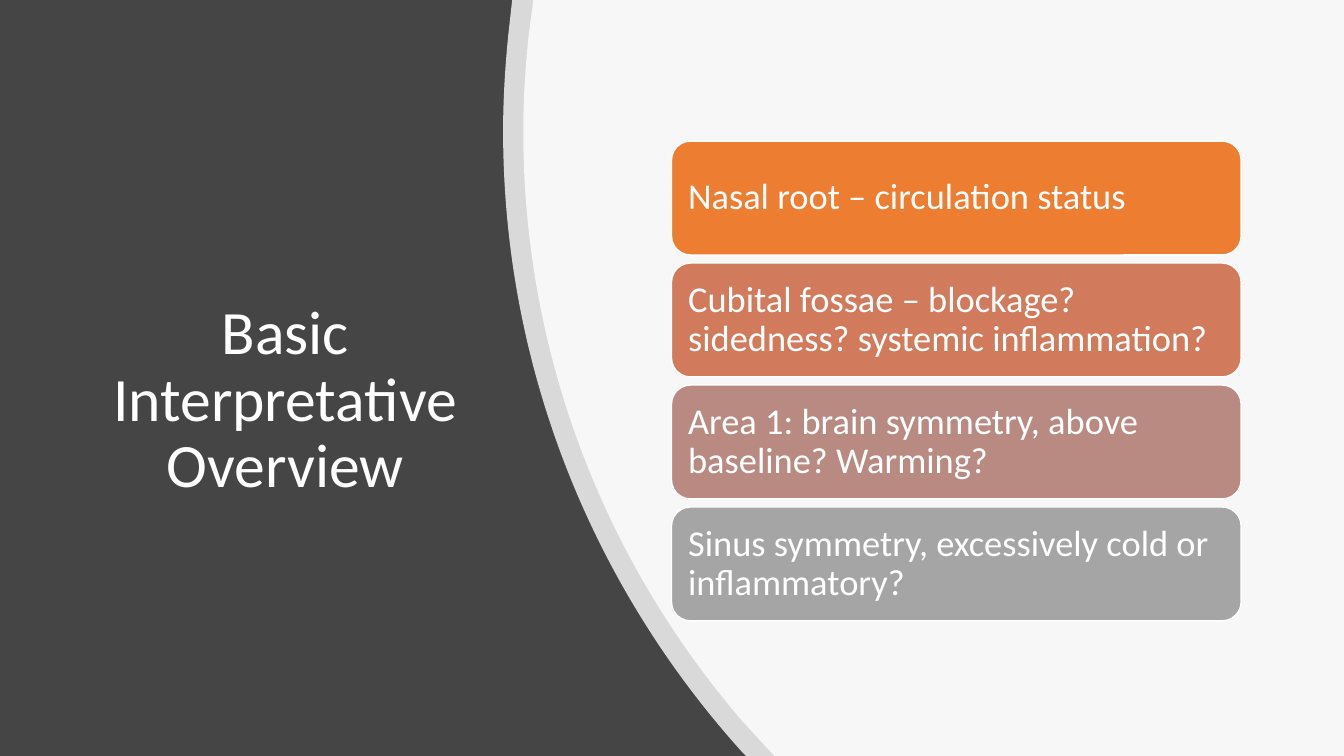
from lxml import etree
from pptx import Presentation
from pptx.dml.color import RGBColor
from pptx.enum.shapes import MSO_SHAPE as SHAPE
from pptx.enum.text import MSO_ANCHOR as ANCHOR, PP_ALIGN as ALIGN
from pptx.oxml.ns import qn
from pptx.util import Inches, Pt

FONT = "Calibri"
WHITE = "FFFFFF"
DARK = "454545"

CARDS = [
    ("Nasal root – circulation status", "ED7D31"),
    ("Cubital fossae – blockage? sidedness? systemic inflammation?", "D17B5C"),
    ("Area 1: brain symmetry, above baseline? Warming?", "B98A82"),
    ("Sinus symmetry, excessively cold or inflammatory?", "A5A5A5"),
]

# Left edge of each panel, relative to its box: bottom corner, curve start,
# three points for each of two Bezier curves, top corner
OUTER_EDGE = [(2.41, 7.5), (2.37, 7.46), (0.9, 5.83), (0, 3.67), (0, 1.3),
              (0, 0.98), (0.02, 0.67), (0.05, 0.36), (0.09, 0)]
INNER_EDGE = [(2.49, 7.5), (2.17, 7.15), (0.82, 5.58), (0, 3.54), (0, 1.3),
              (0, 0.99), (0.02, 0.69), (0.05, 0.38), (0.1, 0)]


def rgb(color):
    return RGBColor.from_string(color)


def paint(fill, color):
    fill.solid()
    fill.fore_color.rgb = rgb(color)


def write(tf, text, size, align):
    tf.text = text
    tf.word_wrap = True
    tf.vertical_anchor = ANCHOR.MIDDLE
    p = tf.paragraphs[0]
    p.alignment = align
    p.line_spacing = 0.9
    font = p.runs[0].font
    font.name, font.size = FONT, Pt(size)
    font.color.rgb = rgb(WHITE)


def add_title(slide, left, top, width, height):
    title = slide.shapes.title
    title.left, title.top = Inches(left), Inches(top)
    title.width, title.height = Inches(width), Inches(height)
    write(title.text_frame, "Basic Interpretative Overview", 44, ALIGN.CENTER)


def merge_into_curve(lines):
    """Turn three line segments into one cubic Bezier segment."""
    curve = etree.Element(qn("a:cubicBezTo"))
    lines[0].addprevious(curve)
    for line in lines:
        curve.append(line[0])
        line.getparent().remove(line)


def add_curved_panel(slide, left, top, width, height, edge):
    points = [(width, 0), (width, height), *edge]
    outline = [(Inches(left + x), Inches(top + y)) for x, y in points]
    builder = slide.shapes.build_freeform(*outline[0])
    builder.add_line_segments(outline[1:], close=True)
    panel = builder.convert_to_shape()
    lines = list(panel.element.iter(qn("a:lnTo")))
    merge_into_curve(lines[3:6])
    merge_into_curve(lines[6:9])

    panel.shadow.inherit = False
    panel.line.fill.background()
    paint(panel.fill, WHITE)
    # 80% opacity
    color = panel.element.spPr.find(qn("a:solidFill"))[0]
    etree.SubElement(color, qn("a:alpha")).set("val", "80000")


def add_cards(slide, left, top, width, height):
    gap = 0.08
    card_height = (height - gap * (len(CARDS) - 1)) / len(CARDS)
    for i, (text, color) in enumerate(CARDS):
        y = top + i * (card_height + gap)
        card = slide.shapes.add_shape(SHAPE.ROUNDED_RECTANGLE, Inches(left), Inches(y),
                                      Inches(width), Inches(card_height))
        card.shadow.inherit = False
        paint(card.fill, color)
        card.line.color.rgb = rgb(WHITE)
        card.line.width = Pt(1)
        tf = card.text_frame
        tf.margin_left = tf.margin_right = Inches(0.11)
        tf.margin_top = tf.margin_bottom = Inches(0.11)
        write(tf, text, 26, ALIGN.LEFT)


def main():
    prs = Presentation()
    prs.slide_width, prs.slide_height = Inches(13.33), Inches(7.5)
    slide = prs.slides.add_slide(prs.slide_layouts[5])
    paint(slide.background.fill, DARK)

    # Title on the dark side
    add_title(slide, 0.87, 1.53, 3.92, 4.9)
    # Two translucent panels that leave a grey band between them
    add_curved_panel(slide, 4.99, 0, 8.34, 7.5, OUTER_EDGE)
    add_curved_panel(slide, 5.19, 0, 8.14, 7.5, INNER_EDGE)
    # Stack of cards
    add_cards(slide, 6.66, 1.4, 5.65, 4.76)

    prs.save("out.pptx")


if __name__ == "__main__":
    main()
